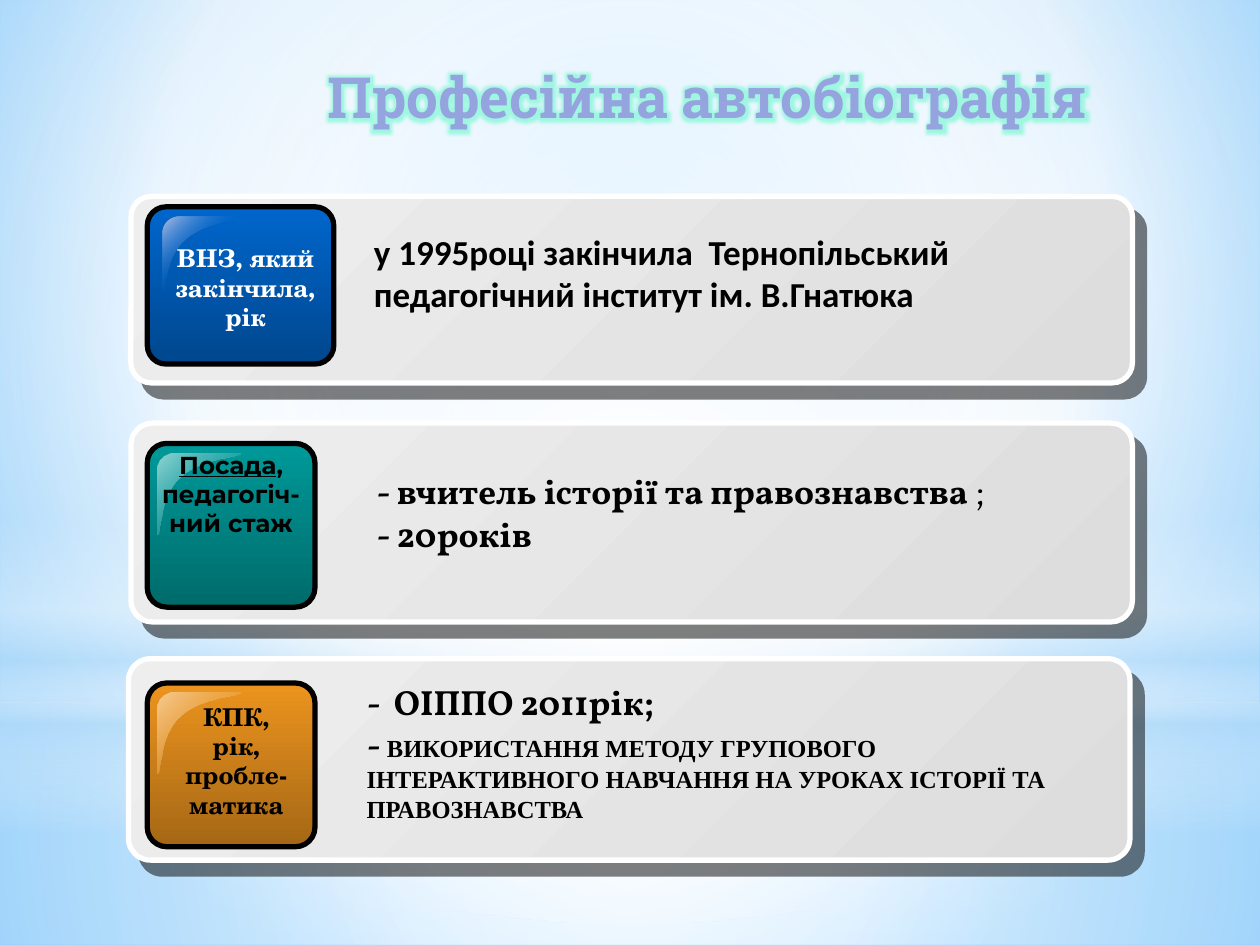
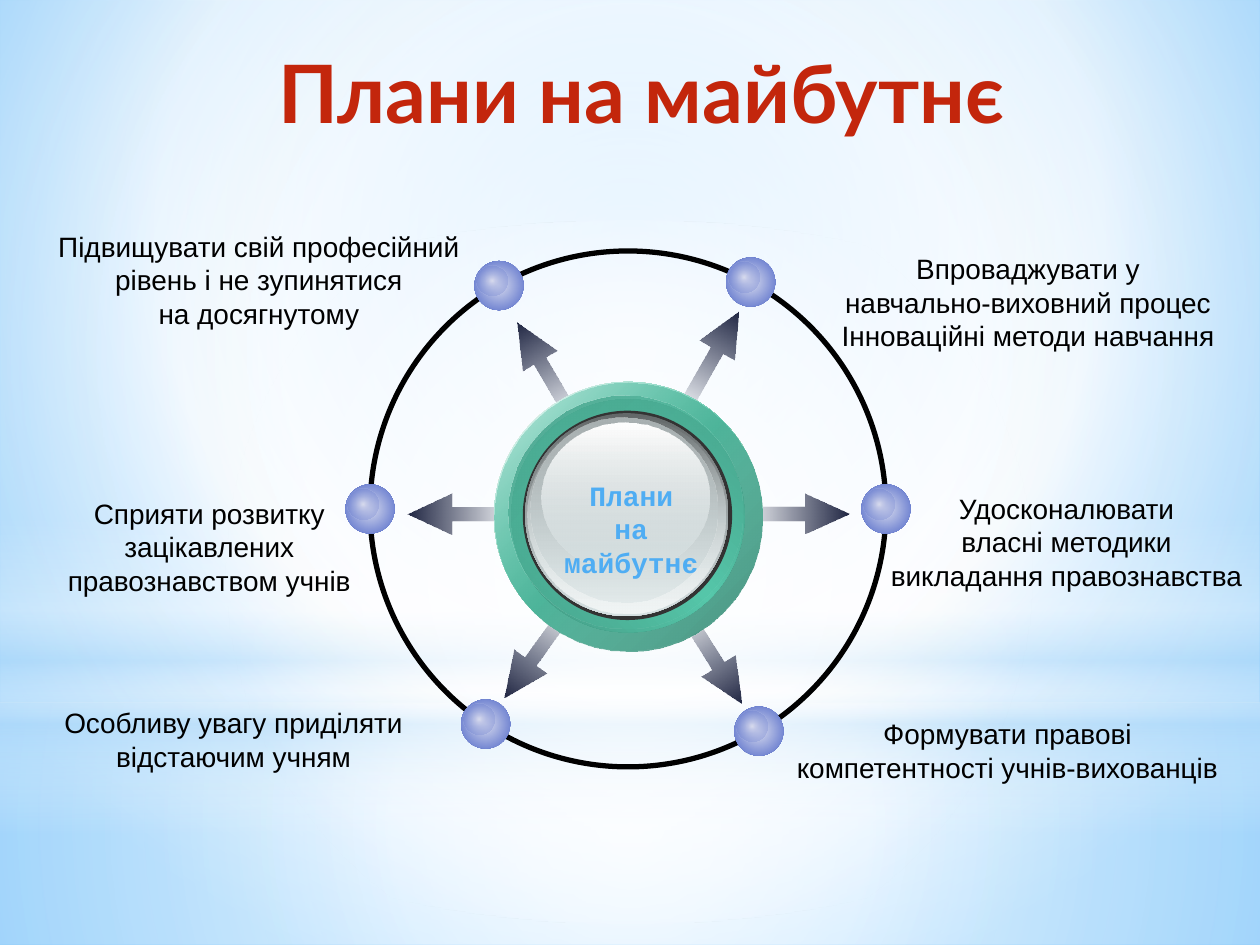
from math import cos, radians, sin

from lxml import etree
from pptx import Presentation
from pptx.dml.color import RGBColor
from pptx.enum.shapes import MSO_SHAPE
from pptx.enum.text import MSO_ANCHOR, MSO_AUTO_SIZE, PP_ALIGN
from pptx.oxml import parse_xml
from pptx.oxml.ns import nsdecls, qn
from pptx.util import Cm, Pt

MID = (50, 50, 50, 50)
LEFT, CENTER, RIGHT = PP_ALIGN.LEFT, PP_ALIGN.CENTER, PP_ALIGN.RIGHT
RECT, ROUND, OVAL = MSO_SHAPE.RECTANGLE, MSO_SHAPE.ROUNDED_RECTANGLE, MSO_SHAPE.OVAL


class Theme:
    width, height = 25.4, 19.05
    line, black, white = 3, "000000", "FFFFFF"
    glow = "9FF7E2"
    # Type styles: font, size, colour, bold
    type = {
        "bio": ("Roboto Slab", 32.4, "95A4DE", True),
        "plan": ("Lato", 46, "C3260C", True),
        "light": ("TeX Gyre Schola", 14, "FFFFFF", True),
        "dark": ("TeX Gyre Schola", 14, "000000", True),
        "post": ("Montserrat", 14, "000000", True),
        "study": ("Calibri", 20, "000000", True),
        "work": ("Vollkorn", 20, "000000", True),
        "thin": ("Vollkorn", 20, "000000", False),
        "caps": ("Times New Roman", 14, "000000", True),
        "hub": ("Courier New", 16, "4FADF3", True),
        "goal": ("Arial", 16, "000000", False),
    }
    # Gradients: stops (place, colour, opacity), then an angle or a focus box
    back = ([(0, "9ED5FF"), (60, "FFFFFF"), (100, "5BB9FF")], (20, 10, 20, 60))
    panel = ([(0, "EEEEEE"), (100, "DDDDDD")], 45)
    arrow = ([(0, "1F2542", 0), (100, "212745")], 0)
    bead = ([(0, "D8DBEE"), (100, "4E67C8")], MID)
    glint = ([(0, "D8DBEE"), (100, "4E67C8", 0)], MID)


# Shared backdrop: shape, box, gradient
BANDS = [
    (RECT, (0, 14.17, 25.4, 4.88),
     ([(0, "FFFFFF", 91), (37, "FFFFFF", 76), (100, "B4DCFA", 79)], MID)),
    (RECT, (0, 0, 25.4, 14.17),
     ([(0, "FFFFFF", 89), (48, "FFFFFF", 62), (100, "B4DCFA", 79)], MID)),
    (RECT, (0, 10.46, 25.4, 6.35),
     ([(0, "FFFFFF", 0), (29, "FFFFFF", 30), (45, "B4DCFA", 40),
       (55, "FFFFFF", 26), (65, "B4DCFA", 60), (100, "FFFFFF", 0)], 90)),
    (OVAL, (0, 4.45, 25.4, 14.17), ([(0, "FFFFFF"), (56, "FFFFFF", 0)], MID)),
]

# Slide 1: each row is a panel with a badge, its label and the facts
BIO = ("Професійна автобіографія", "bio", (1.22, 1.12, 20.95, 1.57), RIGHT)
ROWS = [
    dict(panel=(2.64, 3.96, 20.19, 3.76), badge=(2.97, 4.17, 3.76, 3.17), inset=0.31,
         shade=("0066CC", "00478E"),
         gloss=[(0, "B5C0E5"), (50, "0066CC", 0), (100, "B5C0E5")],
         label=(2.97, 4.78, 3.96, 2.06),
         name=[[("ВНЗ, який закінчила, рік", "light")]],
         body=(7.29, 4.52, 14.88, 2.79),
         facts=[[("у 1995році закінчила  Тернопільський педагогічний "
                  "інститут ім. В.Гнатюка", "study")]]),
    dict(panel=(2.64, 8.53, 20.19, 4.01), badge=(2.97, 8.94, 3.38, 3.3), inset=0.2,
         shade=("009999", "006B6B"),
         gloss=[(0, "93D4D4"), (100, "009999", 0)],
         label=(2.97, 8.94, 3.38, 2.06),
         name=[[("Посада", "post", True), (", педагогіч-ний стаж", "post")]],
         body=(7.34, 9.35, 15.09, 1.96),
         facts=[[("- вчитель історії та правознавства", "work"), (" ;", "thin")],
                [("- 20років", "work")]]),
    dict(panel=(2.59, 13.28, 20.19, 4.06), badge=(2.97, 13.77, 3.38, 3.3), inset=0.2,
         shade=("EC941E", "A56715"),
         gloss=[(0, "F6CB92"), (100, "EC941E", 0)],
         label=(3.38, 14.02, 2.77, 2.64),
         name=[[("КПК, рік,", "dark")], [("пробле-матика", "dark")]],
         body=(7.14, 13.59, 15.09, 3.17),
         facts=[[("-  ОІППО 2011рік;", "work")],
                [("- ", "work"),
                 ("ВИКОРИСТАННЯ МЕТОДУ ГРУПОВОГО ІНТЕРАКТИВНОГО НАВЧАННЯ "
                  "НА УРОКАХ ІСТОРІЇ ТА ПРАВОЗНАВСТВА", "caps")]]),
]
# Gloss outline as cubic curves, from the corner of the gloss
GLOSS = [
    ((0.33, 0), (0.15, 0), (0, 0.15), (0, 0.33)),
    ((0, 1.63), (0.08, 1.65), (0.03, 0.84), (0.46, 0.48)),
    ((0.46, 0.48), (0.86, 0.1), (1.68, 0.08), (1.68, 0)),
]

# Slide 2: goals around a ring
PLAN = ("Плани на майбутнє", "plan", (1.5, 0.74, 22.86, 3.17), CENTER)
RING = (12.66, 10.26, 5.2)
BEAD, GLINT = 0.99, 0.62
ARROW = (2.21, 0.81)
# Angle of bead and arrow, arrow distance, arrow turn, label left, top, width, lines
SPOKES = [
    (298.4, 3.55, 299.6, (16.66, 4.95, 8.13),
     ["Впроваджувати у", "навчально-виховний процес", "Інноваційні методи навчання"]),
    (240, 3.35, 239.5, (0.79, 4.5, 8.86),
     ["Підвищувати свій професійний", "рівень і не зупинятися", "на досягнутому"]),
    (0, 3.35, 0, (17.65, 9.78, 7.7),
     ["Удосконалювати", "власні методики", "викладання правознавства"]),
    (59.5, 3.35, 57.8, (15.75, 14.33, 9.12),
     ["Формувати правові", "компетентності учнів-вихованців"]),
    (180, 3.35, 180, (1.07, 9.88, 6.3),
     ["Сприяти розвитку", "зацікавлених", "правознавством учнів"]),
    (123.5, 3.35, 125.6, (0.99, 14.1, 7.44),
     ["Особливу увагу приділяти", "відстаючим учням"]),
]
# Hub discs from back to front: box, gradient or colour
DISCS = [
    ((9.96, 7.7, 5.41, 5.41), ([(0, "FFFFFF"), (50, "56C7AA"), (100, "FFFFFF")], 45)),
    ((9.96, 7.72, 5.41, 5.41), ([(0, "56C7AA", 32), (100, "3E8E7A")], 45)),
    ((10.31, 8.05, 4.7, 4.7), ([(0, "429882"), (50, "56C7AA"), (100, "429882")], 315)),
    ((10.26, 7.98, 4.7, 4.7), ([(0, "47A38C"), (100, "56C7AA", 0)], 45)),
    ((10.54, 8.28, 4.22, 4.22), "333333"),
    ((10.59, 8.33, 4.09, 4.09), ([(0, "636869"), (100, "D6E1E2")], 90)),
    ((10.64, 8.38, 3.99, 3.99), ([(0, "D6E1E2", 0), (100, "F1F5F5")], 90)),
    ((10.69, 8.41, 3.78, 3.73), ([(0, "AAB2B3"), (100, "D6E1E2", 48)], 90)),
    ((10.92, 8.51, 3.38, 3.02), ([(0, "FFFFFF"), (100, "D6E1E2", 38)], 90)),
]
HUB = ((10.82, 9.52, 3.81, 1.63), ["Плани", "на майбутнє"])


# Drawing helpers
def paint(fill, host, look):
    """Fill with a colour, or with a gradient placed inside host."""
    fill.solid()
    if isinstance(look, str):
        fill.fore_color.rgb = RGBColor.from_string(look)
        return
    stops, aim = look
    grad = etree.Element(qn("a:gradFill"), rotWithShape="1")
    chain = etree.SubElement(grad, qn("a:gsLst"))
    for place, tint, *rest in stops:
        stop = etree.SubElement(chain, qn("a:gs"), pos=str(place * 1000))
        tone = etree.SubElement(stop, qn("a:srgbClr"), val=tint)
        if rest:
            etree.SubElement(tone, qn("a:alpha"), val=str(rest[0] * 1000))
    if isinstance(aim, tuple):
        kind = "circle"
        focus = etree.SubElement(grad, qn("a:path"), path=kind)
        sides = {side: str(n * 1000) for side, n in zip("ltrb", aim)}
        etree.SubElement(focus, qn("a:fillToRect"), **sides)
    else:
        etree.SubElement(grad, qn("a:lin"), ang=str(aim * 60000), scaled="0")
    host.replace(host.find(qn("a:solidFill")), grad)


def dress(shape, look=None, edge=None):
    shape.shadow.inherit = False
    if look:
        paint(shape.fill, shape._element.spPr, look)
    else:
        shape.fill.background()
    if edge:
        shape.line.color.rgb = RGBColor.from_string(edge)
        shape.line.width = Pt(Theme.line)
    else:
        shape.line.fill.background()
    return shape


def draw(slide, kind, box, look=None, edge=None, bend=()):
    shape = slide.shapes.add_shape(kind, *map(Cm, box))
    for n, part in enumerate(bend):
        shape.adjustments[n] = part
    return dress(shape, look, edge)


def disc(slide, x, y, size, look=None, edge=None):
    return draw(slide, OVAL, (x - size / 2, y - size / 2, size, size), look, edge)


def style(run, name, under=False):
    font = run.font
    font.name, size, tint, font.bold = Theme.type[name]
    font.size = Pt(size)
    font.color.rgb = RGBColor.from_string(tint)
    if under:
        font.underline = True


def write(slide, box, paras, align=LEFT, wrap=True):
    frame = slide.shapes.add_textbox(*map(Cm, box)).text_frame
    frame.word_wrap = wrap
    for n, parts in enumerate(paras):
        para = frame.add_paragraph() if n else frame.paragraphs[0]
        para.alignment = align
        for text, *look in parts:
            run = para.add_run()
            run.text = text
            style(run, *look)


def head(slide, text, name, box, align):
    title = slide.shapes.title
    title.left, title.top, title.width, title.height = map(Cm, box)
    frame = title.text_frame
    frame.text = text
    frame.auto_size = MSO_AUTO_SIZE.NONE
    frame.vertical_anchor = MSO_ANCHOR.TOP
    para = frame.paragraphs[0]
    para.alignment = align
    style(para.runs[0], name)
    return para.runs[0]


def drop(shape):
    """Hard offset shadow under a panel."""
    shape._element.spPr.find(qn("a:effectLst")).append(parse_xml(
        f'<a:outerShdw {nsdecls("a")} blurRad="0" dist="{Pt(10.6)}" dir="{49 * 60000}" '
        f'algn="ctr" rotWithShape="0"><a:srgbClr val="{Theme.black}">'
        '<a:alpha val="50000"/></a:srgbClr></a:outerShdw>'))


def shine(slide, left, top, stops):
    """Curved highlight in the corner of a badge."""
    dots = []
    for a, b, c, d in GLOSS:
        for n in range(13):
            t = n / 12
            u = 1 - t
            mix = (u ** 3, 3 * u * u * t, 3 * u * t * t, t ** 3)
            x, y = (sum(k * p[i] for k, p in zip(mix, (a, b, c, d))) for i in (0, 1))
            dots.append((Cm(left + x), Cm(top + y)))
    pen = slide.shapes.build_freeform(*dots[0])
    pen.add_line_segments(dots[1:], close=True)
    dress(pen.convert_to_shape(), (stops, 45))


# Slides
def set_back(deck, slide):
    """Put the backdrop on the master."""
    base = deck.slide_master
    fill = base.background.fill
    fill.solid()
    paint(fill, base._element.find(".//" + qn("p:bgPr")), Theme.back)
    for n, band in enumerate(BANDS):
        item = draw(slide, *band)._element
        item.nvSpPr.cNvPr.set("id", str(50 + n))
        base.shapes._spTree.insert(2 + n, item)


def make_bio(slide):
    run = head(slide, *BIO)
    run._r.rPr.find(qn("a:solidFill")).addnext(parse_xml(
        f'<a:effectLst {nsdecls("a")}><a:glow rad="{Pt(8)}">'
        f'<a:srgbClr val="{Theme.glow}"/></a:glow></a:effectLst>'))
    for row in ROWS:
        drop(draw(slide, ROUND, row["panel"], Theme.panel, Theme.white, [0.109]))
        first, last = row["shade"]
        draw(slide, ROUND, row["badge"], ([(0, first), (100, last)], 90),
             Theme.black, [0.119])
        left, top = row["badge"][:2]
        shine(slide, left + row["inset"], top + 0.2, row["gloss"])
        write(slide, row["label"], row["name"], CENTER)
        write(slide, row["body"], row["facts"])


def make_plan(slide):
    head(slide, *PLAN)
    mid_x, mid_y, reach = RING
    wide, high = ARROW
    for angle, gap, turn, *rest in SPOKES:
        x = mid_x + gap * cos(radians(angle))
        y = mid_y + 0.1 + gap * sin(radians(angle))
        draw(slide, MSO_SHAPE.RIGHT_ARROW, (x - wide / 2, y - high / 2, wide, high),
             Theme.arrow, bend=[0.352, 1.11]).rotation = turn
    disc(slide, mid_x, mid_y, 2 * reach, edge=Theme.black)
    for angle, *rest in SPOKES:
        x = mid_x + reach * cos(radians(angle))
        y = mid_y + reach * sin(radians(angle))
        disc(slide, x, y, BEAD, Theme.bead)
        disc(slide, x - 0.14, y - 0.1, GLINT, Theme.glint)
    for box, look in DISCS:
        draw(slide, OVAL, box, look)
    box, lines = HUB
    write(slide, box, [[(line, "hub")] for line in lines], CENTER)
    for *rest, spot, lines in SPOKES:
        box = (*spot, 0.27 + 0.68 * len(lines))
        write(slide, box, [[(line, "goal")] for line in lines], CENTER, False)


def main():
    deck = Presentation()
    deck.slide_width, deck.slide_height = Cm(Theme.width), Cm(Theme.height)
    bio, plan = (deck.slides.add_slide(deck.slide_layouts[5]) for n in range(2))
    set_back(deck, bio)
    make_bio(bio)
    make_plan(plan)
    deck.save("out.pptx")


if __name__ == "__main__":
    main()
